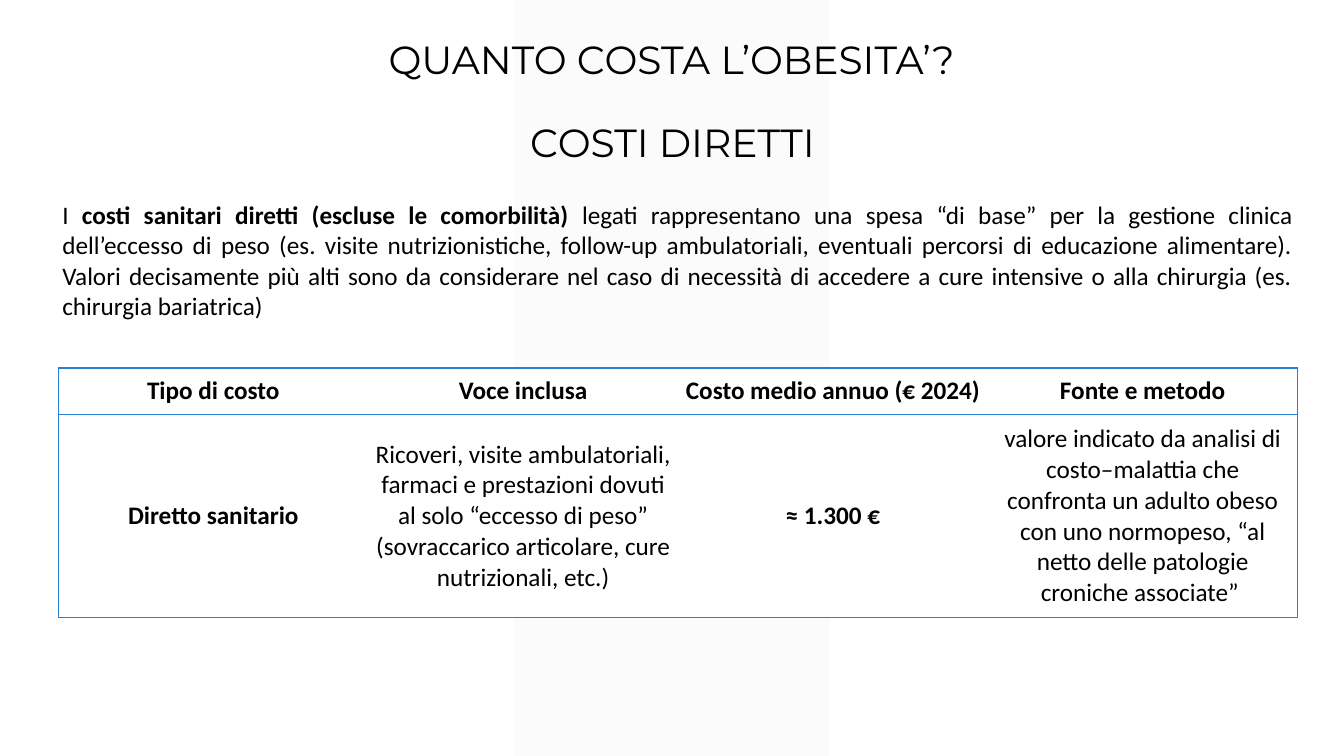
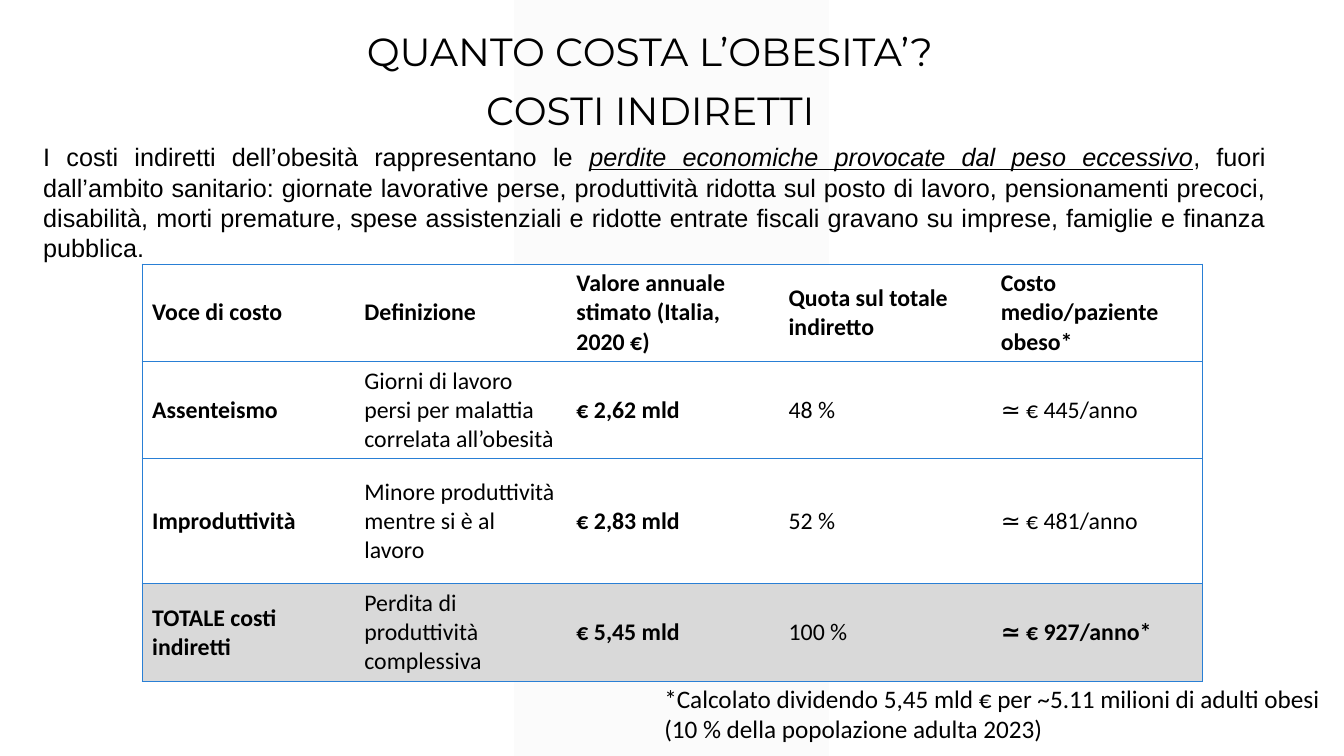
from lxml.etree import SubElement
from pptx import Presentation
from pptx.dml.color import RGBColor
from pptx.enum.shapes import MSO_SHAPE as Preset
from pptx.enum.text import MSO_ANCHOR as Anchor, MSO_AUTO_SIZE as AutoSize, PP_ALIGN as Align
from pptx.oxml import parse_xml
from pptx.oxml.ns import nsdecls, qn
from pptx.util import Inches, Pt

COLORS = {"text": "000000", "band": "F2F2F2", "border": "297FD5", "cell": "FFFFFF", "total": "D9D9D9"}
NO_TABLE_STYLE = "{2D5ABB26-0587-4C30-8999-92F81FD0307C}"
TITLE = "QUANTO COSTA L’OBESITA’?"

SLIDES = [
    {
        "title_at": (3.39, 0.3, 6.54, 0.57),
        "subtitle": "COSTI DIRETTI",
        "subtitle_at": (3.72, 1.12, 5.9, 0.57),
        "intro_at": (0.52, 1.93, 12.4, 1.31),
        "intro_font": "Calibri",
        "intro_anchor": Anchor.TOP,
        "intro": [
            ("I ", ""),
            ("costi sanitari diretti (escluse le comorbilità) ", "b"),
            ("legati rappresentano una spesa “di base” per la gestione clinica dell’eccesso di peso "
             "(es. visite nutrizionistiche, follow-up ambulatoriali, eventuali percorsi di educazione "
             "alimentare). Valori decisamente più alti sono da considerare nel caso di necessità di "
             "accedere a cure intensive o alla chirurgia (es. chirurgia bariatrica)", ""),
        ],
        "table": {
            "at": (0.58, 3.65, 12.29),
            "heights": [0.46, 2.02],
            "size": 18,
            "align": Align.CENTER,
            "margins": (0.07, 0.03),
            "bold_columns": {0, 2},
            "rows": [
                ["Tipo di costo", "Voce inclusa", "Costo medio annuo (€ 2024)", "Fonte e metodo"],
                ["Diretto sanitario",
                 "Ricoveri, visite ambulatoriali, farmaci e prestazioni dovuti al solo “eccesso di peso” "
                 "(sovraccarico articolare, cure nutrizionali, etc.)",
                 "≈ 1.300 €",
                 "valore indicato da analisi di costo–malattia che confronta un adulto obeso con uno "
                 "normopeso, “al netto delle patologie croniche associate” "],
            ],
        },
    },
    {
        "title_at": (3.16, 0.22, 6.57, 0.57),
        "subtitle": "COSTI INDIRETTI",
        "subtitle_at": (3.5, 0.81, 5.9, 0.57),
        "intro_at": (0.33, 1.35, 12.32, 1.31),
        "intro_font": "Arial",
        "intro_anchor": Anchor.MIDDLE,
        "intro": [
            ("I costi indiretti dell’obesità rappresentano le ", ""),
            ("perdite economiche provocate dal peso eccessivo", "iu"),
            (", fuori dall’ambito sanitario: giornate lavorative perse, produttività ridotta sul posto "
             "di lavoro, pensionamenti precoci, disabilità, morti premature, spese assistenziali e ridotte "
             "entrate fiscali gravano su imprese, famiglie e finanza pubblica.", ""),
        ],
        "table": {
            "at": (1.41, 2.62, 10.52),
            "heights": [0.96, 0.96, 1.24, 0.96],
            "size": 17,
            "align": Align.LEFT,
            "margins": (0.1, 0.05),
            "bold_columns": {0, 2},
            "total_bold": {4},
            "rows": [
                ["Voce di costo", "Definizione", "Valore annuale stimato (Italia, 2020 €)",
                 "Quota sul totale indiretto", "Costo medio/paziente obeso*"],
                ["Assenteismo", "Giorni di lavoro persi per malattia correlata all’obesità",
                 "€ 2,62 mld", "48 %", "≃ € 445/anno"],
                ["Improduttività", "Minore produttività mentre si è al lavoro",
                 "€ 2,83 mld", "52 %", "≃ € 481/anno"],
                ["TOTALE costi indiretti", "Perdita di produttività complessiva",
                 "€ 5,45 mld", "100 %", "≃ € 927/anno*"],
            ],
        },
        "note_at": (6.49, 6.73, 6.84, 0.71),
        "note": "*Calcolato dividendo 5,45 mld € per ~5.11 milioni di adulti obesi "
                "(10 % della popolazione adulta 2023)",
    },
]


def color(name):
    return RGBColor.from_string(COLORS[name])


def inches(values):
    return [Inches(value) for value in values]


def write(frame, runs, font, size, align, anchor=Anchor.TOP):
    frame.word_wrap = True
    frame.vertical_anchor = anchor
    paragraph = frame.paragraphs[0]
    paragraph.alignment = align
    for text, marks in runs:
        run = paragraph.add_run()
        run.text = text
        run.font.name = font
        run.font.size = Pt(size)
        run.font.color.rgb = color("text")
        run.font.bold = "b" in marks
        run.font.italic = "i" in marks
        run.font.underline = "u" in marks


def add_text(slide, place, *text_style):
    frame = slide.shapes.add_textbox(*inches(place)).text_frame
    frame.auto_size = AutoSize.NONE
    write(frame, *text_style)


def add_title(slide, place):
    title = slide.shapes.title
    title.left, title.top, title.width, title.height = inches(place)
    title.text_frame.auto_size = AutoSize.NONE
    write(title.text_frame, [(TITLE, "")], "Montserrat", 28, Align.CENTER)


def set_borders(cell, sides):
    properties = cell._tc.get_or_add_tcPr()
    for position, side in enumerate("LRTB"):
        paint = f'<a:solidFill><a:srgbClr val="{COLORS["border"]}"/></a:solidFill>' if side in sides else "<a:noFill/>"
        properties.insert(position, parse_xml(f'<a:ln{side} {nsdecls("a")} w="{Pt(1)}">{paint}</a:ln{side}>'))


def add_table(slide, data):
    left, top, width = data["at"]
    rows, heights = data["rows"], data["heights"]
    last_row, last_column = len(rows) - 1, len(rows[0]) - 1
    has_total = "total_bold" in data
    frame = slide.shapes.add_table(len(rows), len(rows[0]), *inches((left, top, width, sum(heights))))
    table = frame.table
    table.first_row = table.horz_banding = False
    next(frame.element.iter(qn("a:tableStyleId"))).text = NO_TABLE_STYLE
    for column in table.columns:
        column.width = Inches(width / len(rows[0]))
    for row_index, row in enumerate(rows):
        table.rows[row_index].height = Inches(heights[row_index])
        is_total = has_total and row_index == last_row
        bold_columns = data["bold_columns"] | (data["total_bold"] if is_total else set())
        for column_index, text in enumerate(row):
            cell = table.cell(row_index, column_index)
            cell.margin_left = cell.margin_right = Inches(data["margins"][0])
            cell.margin_top = cell.margin_bottom = Inches(data["margins"][1])
            cell.vertical_anchor = Anchor.MIDDLE
            bold = row_index == 0 or column_index in bold_columns
            write_cell(cell, text, bold, data)
            cell.fill.solid()
            cell.fill.fore_color.rgb = color("total" if is_total else "cell")
            sides = "TB" + ("L" if column_index == 0 else "") + ("R" if column_index == last_column else "")
            set_borders(cell, sides)


def write_cell(cell, text, bold, data):
    paragraph = cell.text_frame.paragraphs[0]
    paragraph.alignment = data["align"]
    run = paragraph.add_run()
    run.text = text
    run.font.name = "Calibri"
    run.font.size = Pt(data["size"])
    run.font.bold = bold
    run.font.color.rgb = color("text")


def add_master_band(presentation, slide):
    band = slide.shapes.add_shape(Preset.PARALLELOGRAM, *inches((5.1, 0, 3.12, 7.5)))
    band.adjustments[0] = 0
    band.shadow.inherit = False
    band.line.fill.background()
    band.fill.solid()
    band.fill.fore_color.rgb = color("band")
    SubElement(next(band.element.iter(qn("a:srgbClr"))), qn("a:alpha"), val="30000")
    band.element.nvSpPr.cNvPr.set("id", "20")
    presentation.slide_master.shapes.element.insert(2, band.element)


def main():
    presentation = Presentation()
    presentation.slide_width, presentation.slide_height = inches((13.33, 7.5))
    for index, content in enumerate(SLIDES):
        slide = presentation.slides.add_slide(presentation.slide_layouts[5])
        if index == 0:
            add_master_band(presentation, slide)
        add_title(slide, content["title_at"])
        add_text(slide, content["subtitle_at"], [(content["subtitle"], "")], "Montserrat", 28, Align.CENTER)
        add_text(slide, content["intro_at"], content["intro"], content["intro_font"], 18,
                 Align.JUSTIFY, content["intro_anchor"])
        add_table(slide, content["table"])
        if "note" in content:
            add_text(slide, content["note_at"], [(content["note"], "")], "Calibri", 18, Align.LEFT)
    presentation.save("out.pptx")


if __name__ == "__main__":
    main()
